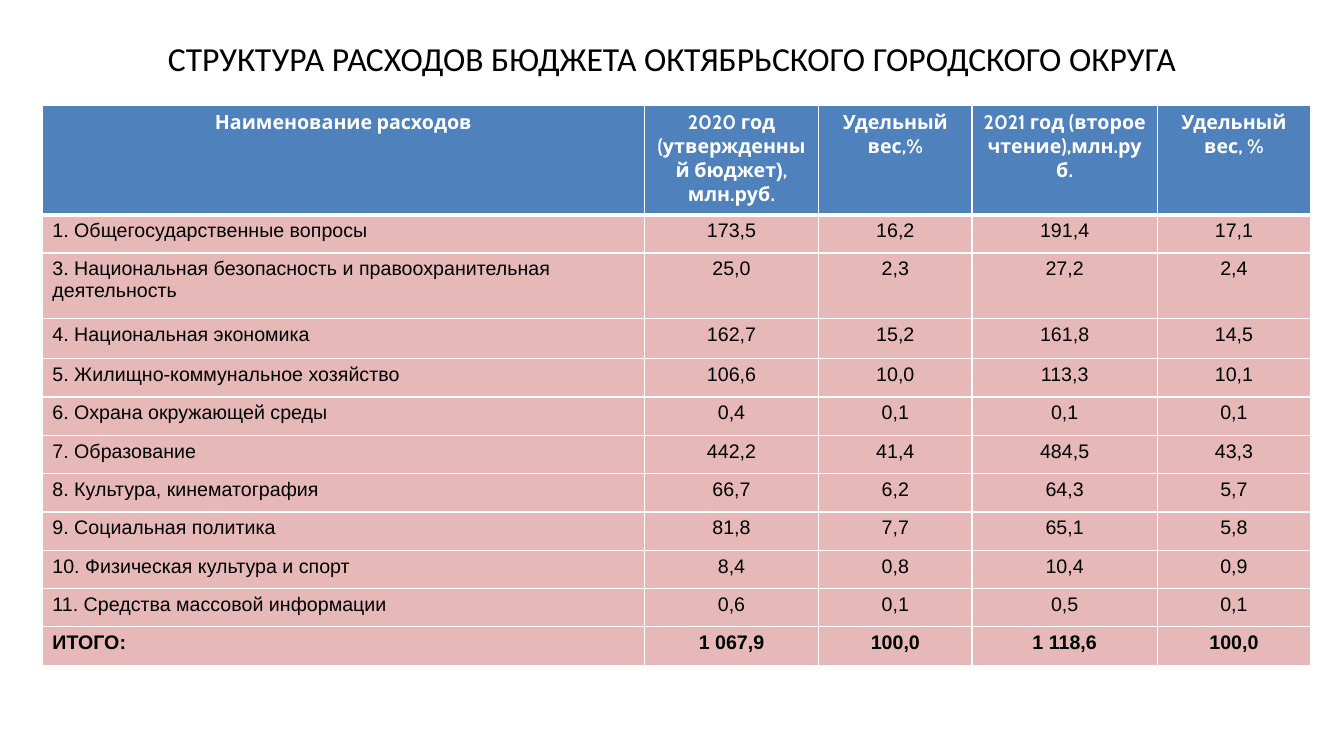
from lxml.etree import SubElement
from pptx import Presentation
from pptx.dml.color import RGBColor
from pptx.enum.text import MSO_ANCHOR, PP_ALIGN
from pptx.oxml.ns import qn
from pptx.util import Inches, Pt

COLORS = {"black": "000000", "white": "FFFFFF", "header": "4F81BD", "body": "E6B9B8"}

TITLE = "СТРУКТУРА РАСХОДОВ БЮДЖЕТА ОКТЯБРЬСКОГО ГОРОДСКОГО ОКРУГА"
# A header is a list of (text, font) spans
HEADERS = [
    [("Наименование расходов", "Cabin")],
    [("2020 год (утвержденный бюджет", "Cabin"), (")", "Arial"), (", млн.руб.", "Cabin")],
    [("Удельный вес,%", "Cabin")],
    [("2021 год (второе чтение),млн.руб.", "Cabin")],
    [("Удельный вес, %", "Cabin")],
]
EXPENSES = [
    ("1. Общегосударственные вопросы", "173,5", "16,2", "191,4", "17,1"),
    ("3. Национальная безопасность и правоохранительная деятельность",
     "25,0", "2,3", "27,2", "2,4"),
    ("4. Национальная экономика", "162,7", "15,2", "161,8", "14,5"),
    ("5. Жилищно-коммунальное хозяйство", "106,6", "10,0", "113,3", "10,1"),
    ("6. Охрана окружающей среды", "0,4", "0,1", "0,1", "0,1"),
    ("7. Образование", "442,2", "41,4", "484,5", "43,3"),
    ("8. Культура, кинематография", "66,7", "6,2", "64,3", "5,7"),
    ("9. Социальная политика", "81,8", "7,7", "65,1", "5,8"),
    ("10. Физическая культура и спорт", "8,4", "0,8", "10,4", "0,9"),
    ("11. Средства массовой информации", "0,6", "0,1", "0,5", "0,1"),
    ("ИТОГО:", "1 067,9", "100,0", "1 118,6", "100,0"),
]
# Percent of the slide's width and height
COLUMN_WIDTHS = [44.79, 12.98, 11.4, 13.8, 11.4]
ROW_HEIGHTS = [14.4, 5.07, 8.67, 5.33] + [5.07] * 8


class SlideBuilder:
    """Holds the style and the current slide; lengths are percent of the slide."""

    def __init__(self, deck):
        self.deck = deck
        self.page = deck.slides.add_slide(deck.slide_layouts[6])

    def across(self, percent):
        return round(self.deck.slide_width * percent / 100)

    def down(self, percent):
        return round(self.deck.slide_height * percent / 100)

    def place(self, left, top, width, height):
        return self.across(left), self.down(top), self.across(width), self.down(height)

    def add_text(self, frame, spans, color, size, bold=False, align=PP_ALIGN.CENTER):
        para = frame.paragraphs[0]
        para.alignment = align
        for text, font in spans:
            span = para.add_run()
            span.text = text
            for name, value in {"name": font, "size": Pt(size), "bold": bold}.items():
                setattr(span.font, name, value)
            span.font.color.rgb = RGBColor.from_string(COLORS[color])

    def title(self, text, *position):
        frame = self.page.shapes.add_textbox(*self.place(*position)).text_frame
        for name, value in {"word_wrap": True, "vertical_anchor": MSO_ANCHOR.MIDDLE}.items():
            setattr(frame, name, value)
        self.add_text(frame, [(text, "Calibri")], "black", 24)

    def borders(self, cell, top, bottom):
        properties = cell._tc.get_or_add_tcPr()
        for side, width in {"L": 1, "R": 1, "T": top, "B": bottom}.items():
            line = SubElement(properties, qn(f"a:ln{side}"), w=str(Pt(width)))
            fill = SubElement(line, qn("a:solidFill"))
            SubElement(fill, qn("a:srgbClr"), val=COLORS["white"])

    def table(self, left, top, widths, heights):
        position = self.place(left, top, sum(widths), sum(heights))
        table = self.page.shapes.add_table(len(heights), len(widths), *position).table
        for name in ("first_row", "horz_banding"):
            setattr(table, name, False)
        for column, width in zip(table.columns, widths):
            column.width = self.across(width)
        for row, height in zip(table.rows, heights):
            row.height = self.down(height)
        return table

    def cell(self, cell, spans, fill, top=1, bottom=1, **text_format):
        self.borders(cell, top, bottom)
        cell.fill.solid()
        cell.fill.fore_color.rgb = RGBColor.from_string(COLORS[fill])
        self.add_text(cell.text_frame, spans, size=14, **text_format)


def main():
    deck = Presentation()
    deck.slide_width, deck.slide_height = Inches(13.33), Inches(7.5)
    builder = SlideBuilder(deck)

    # Title
    builder.title(TITLE, 5, -0.67, 90, 16.67)

    # Table header
    table = builder.table(3.15, 14, COLUMN_WIDTHS, ROW_HEIGHTS)
    for column, spans in enumerate(HEADERS):
        builder.cell(table.cell(0, column), spans, "header", bottom=3,
                     color="white", bold=True)

    # Expenses, with the total in bold
    for row, values in enumerate(EXPENSES, start=1):
        for column, value in enumerate(values):
            builder.cell(table.cell(row, column), [(value, "Arial")], "body",
                         top=3 if row == 1 else 1, color="black",
                         bold=row == len(EXPENSES),
                         align=PP_ALIGN.CENTER if column else PP_ALIGN.LEFT)

    deck.save("out.pptx")


if __name__ == "__main__":
    main()
